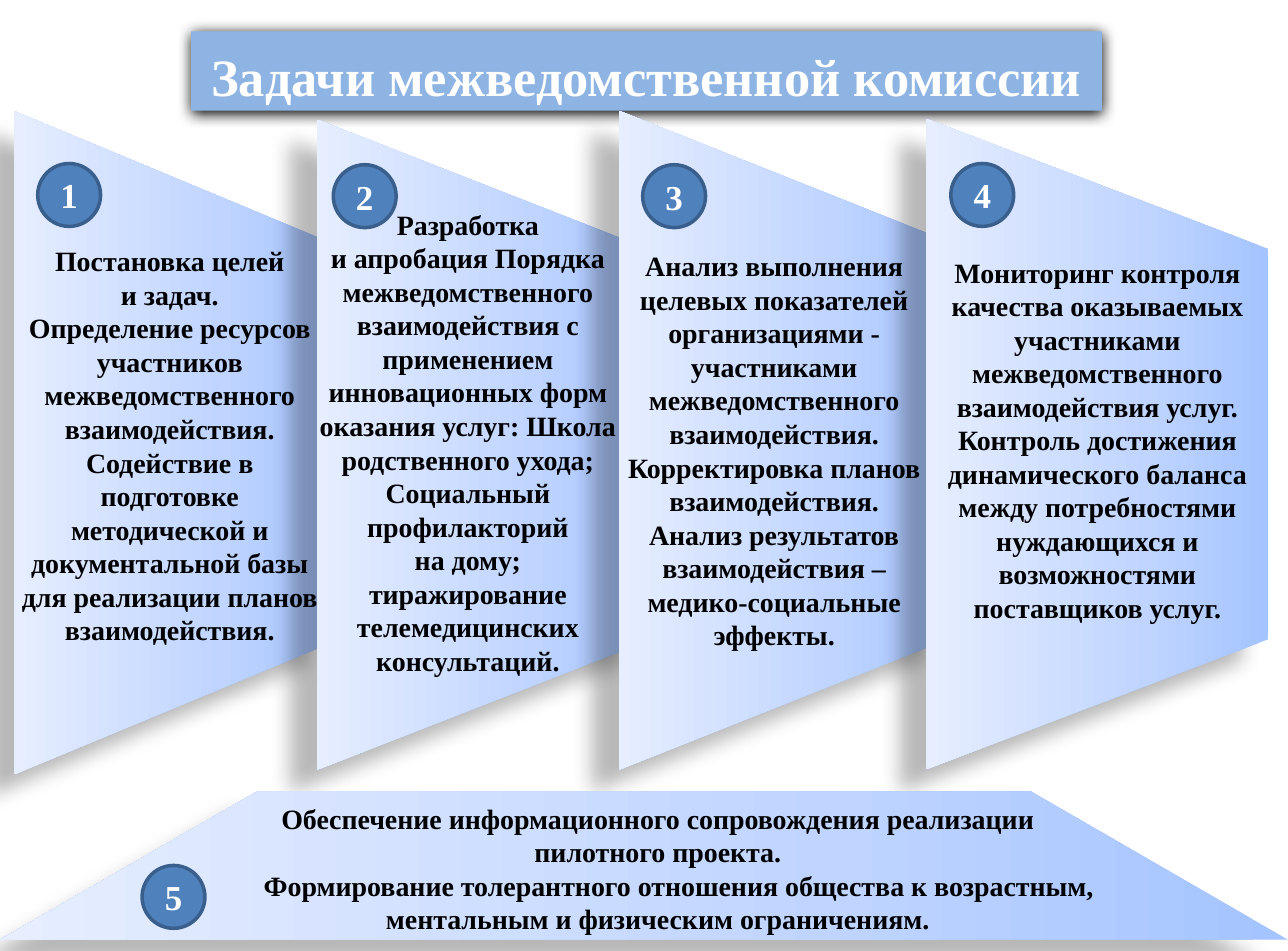
from lxml.etree import SubElement
from pptx import Presentation
from pptx.dml.color import RGBColor
from pptx.enum.shapes import MSO_SHAPE
from pptx.enum.text import MSO_ANCHOR, MSO_AUTO_SIZE, PP_ALIGN
from pptx.oxml import parse_xml
from pptx.oxml.ns import nsdecls, qn
from pptx.util import Emu, Pt

PX = 9144  # 100 px to the inch
FONT = "Times New Roman"
WHITE = RGBColor(0xFF, 0xFF, 0xFF)
BLACK = RGBColor(0x00, 0x00, 0x00)
TITLE_BLUE = RGBColor(0x8E, 0xB4, 0xE3)
BADGE_BLUE = RGBColor(0x4F, 0x81, 0xBD)
BADGE_LINE = RGBColor(0x3A, 0x5F, 0x8C)
PANEL_STOPS = [
    (0, RGBColor(0xA4, 0xC4, 0xFF)),
    (35, RGBColor(0xBF, 0xD4, 0xFF)),
    (100, RGBColor(0xE6, 0xEE, 0xFF)),
]

# Each task: panel box, rotation, gradient angle, text box, paragraphs
TASKS = [
    ((-125, 225, 527, 254), 270, 270, (5, 189, 260, 333), [
        "Постановка целей",
        "и задач.",
        "Определение ресурсов",
        "участников",
        "межведомственного",
        "взаимодействия. Содействие в подготовке методической и "
        "документальной базы для реализации планов взаимодействия.",
    ]),
    ((126, 221, 517, 265), 270, 270, (218, 160, 308, 387), [
        "Разработка",
        "и апробация Порядка",
        "межведомственного",
        "взаимодействия с",
        "применением",
        "инновационных форм оказания услуг: Школа родственного ухода;",
        "Социальный",
        "профилакторий",
        "на дому;",
        "тиражирование телемедицинских консультаций.",
    ]),
    ((362, 218, 524, 264), 270, 270, (475, 193, 281, 333), [
        "Анализ выполнения целевых показателей организациями - "
        "участниками межведомственного взаимодействия.",
        "Корректировка планов взаимодействия.",
        "Анализ результатов взаимодействия –",
        "медико-социальные эффекты.",
    ]),
    ((614, 217, 517, 272), 270, 270, (737, 198, 271, 333), [
        "Мониторинг контроля качества оказываемых участниками "
        "межведомственного взаимодействия услуг.",
        "Контроль достижения динамического баланса между потребностями "
        "нуждающихся и возможностями поставщиков услуг.",
    ]),
    ((0, 629, 1024, 118), 180, 0, (62, 632, 922, 122), [
        "Обеспечение информационного сопровождения реализации",
        "пилотного проекта.",
        "Формирование толерантного отношения общества к возрастным,",
        "ментальным и физическим ограничениям.",
    ]),
]
BADGES = [(30, 130), (265, 131), (511, 131), (756, 130), (113, 688)]
BADGE_SIZE = 50


def emu(box):
    return [Emu(v * PX) for v in box]


def write(tf, lines, size=16, color=BLACK, spacing=None, after=None):
    tf.word_wrap = True
    for i, line in enumerate(lines):
        p = tf.paragraphs[0] if i == 0 else tf.add_paragraph()
        p.alignment = PP_ALIGN.CENTER
        p.line_spacing = spacing
        p.space_after = after
        r = p.add_run()
        r.text = line
        r.font.name = FONT
        r.font.size = Pt(size)
        r.font.bold = True
        r.font.color.rgb = color


def add_shape(s, kind, box, fill=None, line=None):
    sp = s.shapes.add_shape(kind, *emu(box))
    sp.shadow.inherit = False
    if fill is not None:
        sp.fill.solid()
        sp.fill.fore_color.rgb = fill
    if line is None:
        sp.line.fill.background()
    else:
        sp.line.color.rgb = line
        sp.line.width = Pt(2)
    return sp


def set_shadow(sp, alpha, blur, dist, angle):
    effects = sp._element.spPr.find(qn("a:effectLst"))
    shadow = SubElement(
        effects, qn("a:outerShdw"), blurRad=str(Pt(blur)), dist=str(Pt(dist)),
        dir=str(angle * 60000), algn="ctr", rotWithShape="0")
    color = SubElement(shadow, qn("a:srgbClr"), val=str(BLACK))
    SubElement(color, qn("a:alpha"), val=str(alpha * 1000))


def set_gradient(sp, stops, angle):
    gs = "".join(
        f'<a:gs pos="{pos * 1000}"><a:srgbClr val="{color}"/></a:gs>'
        for pos, color in stops)
    grad = parse_xml(
        f'<a:gradFill {nsdecls("a")} rotWithShape="1"><a:gsLst>{gs}</a:gsLst>'
        f'<a:lin ang="{angle * 60000}" scaled="0"/></a:gradFill>')
    sp._element.spPr.find(qn("a:prstGeom")).addnext(grad)


def add_title(s):
    sp = add_shape(s, MSO_SHAPE.RECTANGLE, (152, 25, 724, 63), TITLE_BLUE)
    set_shadow(sp, 100, 8.5, 1, 90)
    sp.text_frame.vertical_anchor = MSO_ANCHOR.MIDDLE
    write(sp.text_frame, ["Задачи межведомственной комиссии"], size=30,
          color=WHITE, spacing=1.15, after=Pt(10))


def add_panel(s, box, rotation, angle):
    sp = add_shape(s, MSO_SHAPE.FLOWCHART_MANUAL_OPERATION, box)
    sp.rotation = rotation
    set_gradient(sp, PANEL_STOPS, angle)
    set_shadow(sp, 28, 11.8, 19.7, 141)


def add_text(s, box, lines):
    tf = s.shapes.add_textbox(*emu(box)).text_frame
    write(tf, lines)
    tf.auto_size = MSO_AUTO_SIZE.SHAPE_TO_FIT_TEXT
    return tf


def add_badge(s, number, left, top):
    sp = add_shape(s, MSO_SHAPE.FLOWCHART_CONNECTOR,
                   (left, top, BADGE_SIZE, BADGE_SIZE), BADGE_BLUE, BADGE_LINE)
    sp.text_frame.vertical_anchor = MSO_ANCHOR.MIDDLE
    write(sp.text_frame, [str(number)], size=20, color=WHITE)


def main():
    prs = Presentation()
    prs.slide_width, prs.slide_height = emu((1024, 756))
    s = prs.slides.add_slide(prs.slide_layouts[6])

    # Title bar
    add_title(s)

    # Task panels with their texts
    for panel, rotation, angle, text_box, lines in TASKS:
        add_panel(s, panel, rotation, angle)
        tf = add_text(s, text_box, lines)

    # Indent of the second statement in the bottom panel
    tf.paragraphs[2]._p.get_or_add_pPr().set("marL", str(Pt(24)))

    # Numbered badges
    for number, (left, top) in enumerate(BADGES, 1):
        add_badge(s, number, left, top)

    prs.save("out.pptx")


if __name__ == "__main__":
    main()
